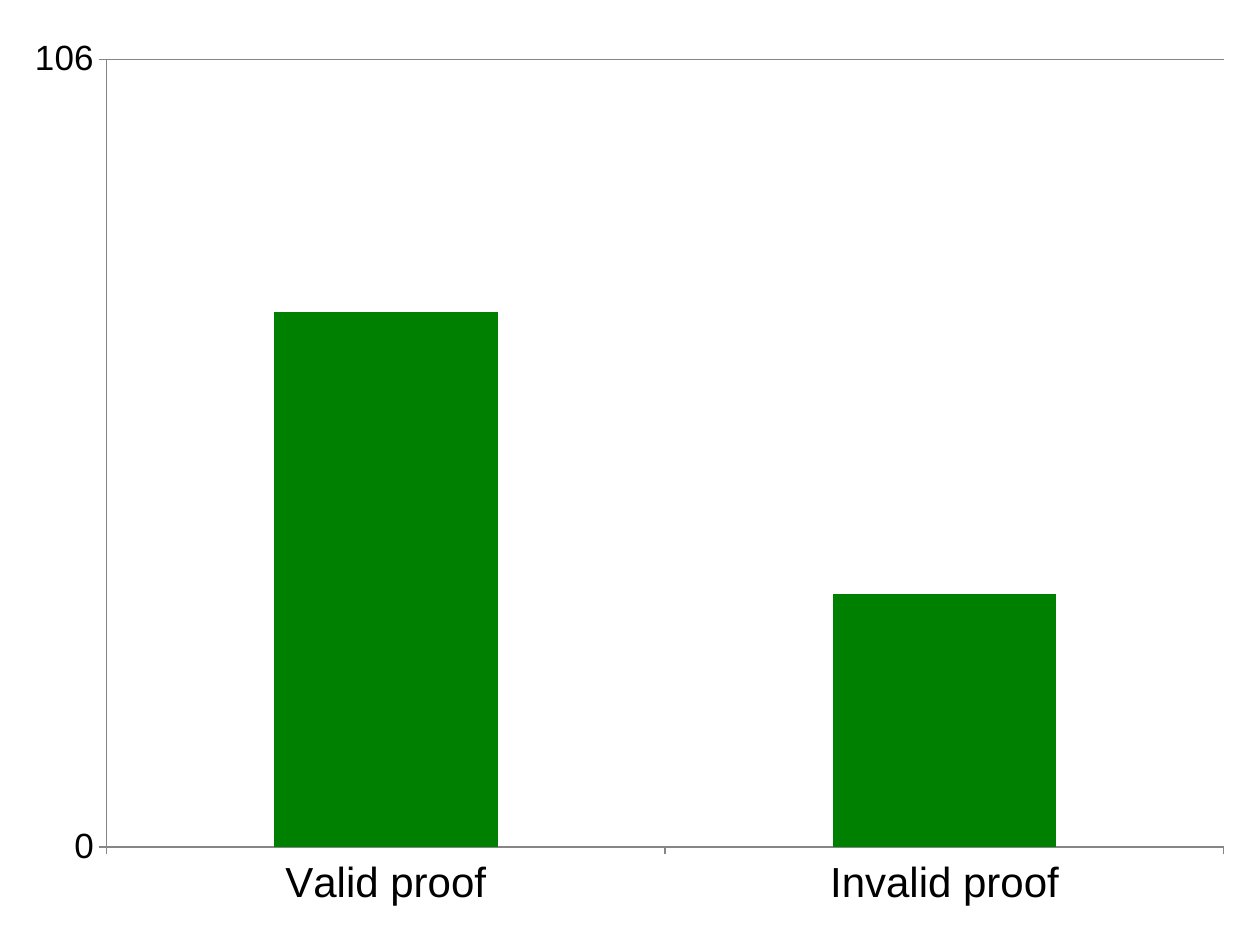
from dataclasses import dataclass

from pptx import Presentation
from pptx.chart.data import CategoryChartData
from pptx.dml.color import RGBColor
from pptx.enum.chart import XL_CHART_TYPE, XL_TICK_MARK
from pptx.util import Inches, Pt


@dataclass(frozen=True)
class Theme:
    font: str = "Arial"
    text: RGBColor = RGBColor(0x00, 0x00, 0x00)
    bar: RGBColor = RGBColor(0x00, 0x80, 0x00)
    axis: RGBColor = RGBColor(0x86, 0x86, 0x86)
    base_size: Pt = Pt(10)
    category_size: Pt = Pt(24)
    value_size: Pt = Pt(20)
    line_width: Pt = Pt(0.75)


THEME = Theme()
TOTAL_PROOFS = 106
PROOF_COUNTS = {"Valid proof": 72, "Invalid proof": 34}


def set_attributes(target, values):
    for name, value in values.items():
        setattr(target, name, value)


def style_line(line):
    line.color.rgb = THEME.axis
    line.width = THEME.line_width


def style_axis(axis, label_size, settings):
    set_attributes(axis, {
        "major_tick_mark": XL_TICK_MARK.OUTSIDE,
        "minor_tick_mark": XL_TICK_MARK.NONE,
        **settings,
    })
    axis.tick_labels.font.size = label_size
    style_line(axis.format.line)


def add_proof_chart(slide, left, top, width, height):
    data = CategoryChartData()
    data.categories = list(PROOF_COUNTS)
    data.add_series("Series 1", list(PROOF_COUNTS.values()))
    chart = slide.shapes.add_chart(
        XL_CHART_TYPE.COLUMN_CLUSTERED, left, top, width, height, data
    ).chart
    set_attributes(chart, {"has_legend": False, "has_title": False})
    set_attributes(chart.font, {"name": THEME.font, "size": THEME.base_size})
    chart.font.color.rgb = THEME.text

    bars = chart.plots[0]
    set_attributes(bars, {"gap_width": 150, "vary_by_categories": False})
    bar_fill = bars.series[0].format.fill
    bar_fill.solid()
    bar_fill.fore_color.rgb = THEME.bar

    style_axis(chart.category_axis, THEME.category_size,
               {"has_major_gridlines": False})
    style_axis(chart.value_axis, THEME.value_size, {
        "minimum_scale": 0,
        "maximum_scale": TOTAL_PROOFS,
        "major_unit": TOTAL_PROOFS,
        "has_major_gridlines": True,
    })
    style_line(chart.value_axis.major_gridlines.format.line)


def main():
    deck = Presentation()
    set_attributes(deck, {"slide_width": Inches(10), "slide_height": Inches(7.5)})
    slide = deck.slides.add_slide(deck.slide_layouts[6])
    add_proof_chart(slide, Inches(0.08), Inches(0.17), Inches(9.83), Inches(7.17))
    deck.save("out.pptx")


if __name__ == "__main__":
    main()
